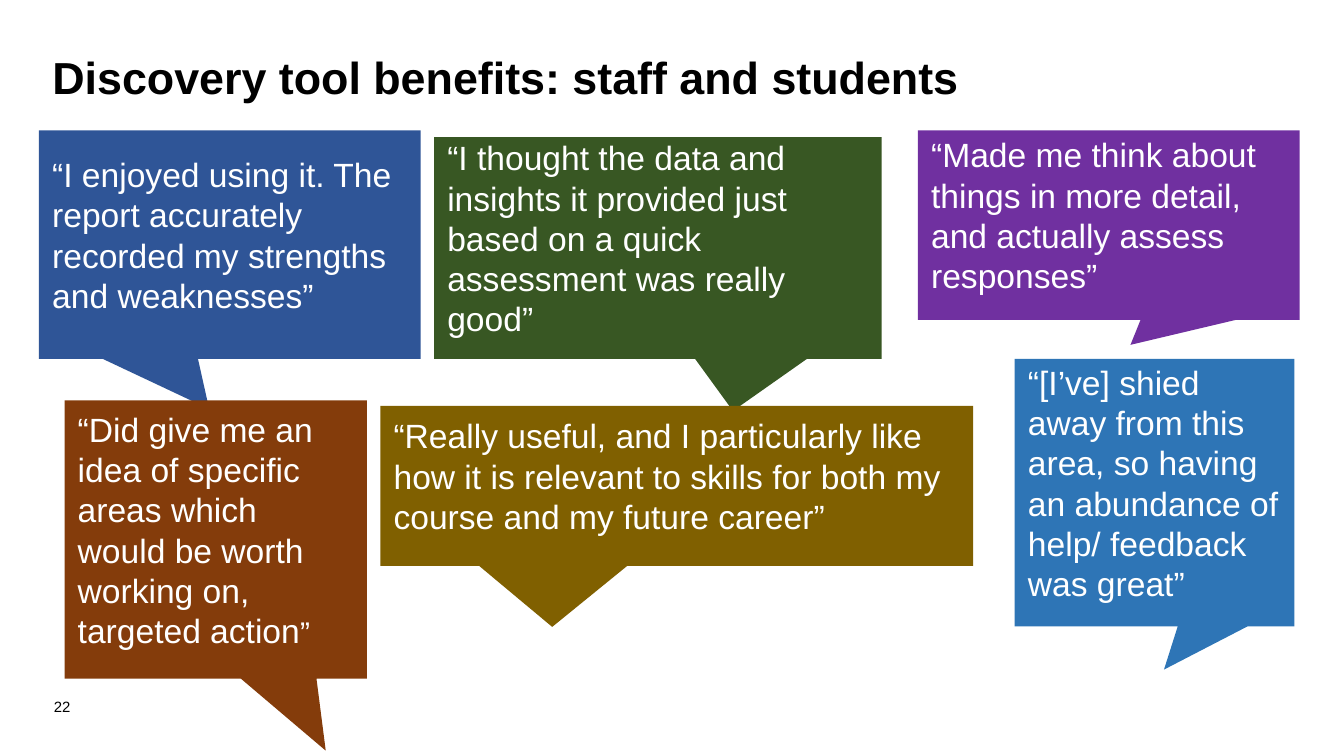
from pptx import Presentation
from pptx.dml.color import RGBColor
from pptx.enum.shapes import MSO_SHAPE
from pptx.enum.text import MSO_ANCHOR, PP_ALIGN
from pptx.util import Inches, Pt

CALLOUT = MSO_SHAPE.RECTANGULAR_CALLOUT
TOP, MIDDLE = MSO_ANCHOR.TOP, MSO_ANCHOR.MIDDLE
LEFT = PP_ALIGN.LEFT

FONT = "Arial"
BLACK, WHITE = "000000", "FFFFFF"
QUOTE_INSETS = (0.1, 0.12, 0.1, 0.27)
NO_INSETS = (0, 0, 0, 0)

TITLE = "Discovery tool benefits: staff and students"
PAGE_NUMBER = "22"

# box, pointer tip as shares of the box from its centre, fill, runs
QUOTES = [
    ((0.29, 0.97, 2.84, 1.7), (-0.054, 0.72), "2F5597",
     [("“I enjoyed using it. The report accurately recorded my strengths and weaknesses”", 18)]),
    ((0.48, 2.98, 2.25, 2.07), (0.364, 0.759), "843C0B",
     [("“Did give me an idea of specific areas which would be worth working on, targeted action", 18),
      ("”", 16)]),
    ((3.23, 1.02, 3.33, 1.65), (0.168, 0.735), "385723",
     [("“I thought the data and insights it provided just based on a quick assessment was really good”", 18)]),
    ((6.83, 0.97, 2.84, 1.41), (0.057, 0.632), "7030A0",
     [("“Made me think about things in more detail, and actually assess responses”", 18)]),
    ((2.83, 3.02, 4.41, 1.19), (-0.21, 0.882), "806000",
     [("“Really useful, and I particularly like how it is relevant to skills for both my course and my future career”", 18)]),
    ((7.55, 2.67, 2.08, 1.99), (0.034, 0.662), "2E75B6",
     [("“[I’ve] shied away from this area, so having an abundance of help/ feedback was great”", 18)]),
]


def color(value):
    return RGBColor.from_string(value)


def write(shape, runs, text_color, insets, anchor, bold=False):
    frame = shape.text_frame
    frame.word_wrap = True
    frame.vertical_anchor = anchor
    (frame.margin_left, frame.margin_top,
     frame.margin_right, frame.margin_bottom) = map(Inches, insets)
    paragraph = frame.paragraphs[0]
    paragraph.alignment = LEFT
    for text, size in runs:
        run = paragraph.add_run()
        run.text = text
        run.font.name = FONT
        run.font.size = Pt(size)
        run.font.bold = bold
        run.font.color.rgb = color(text_color)


def add_text(slide, box, text, size, anchor, bold=False):
    shape = slide.shapes.add_textbox(*map(Inches, box))
    write(shape, [(text, size)], BLACK, NO_INSETS, anchor, bold)


def add_quote(slide, box, tip, fill, runs):
    shape = slide.shapes.add_shape(CALLOUT, *map(Inches, box))
    shape.shadow.inherit = False
    shape.adjustments[0], shape.adjustments[1] = tip
    shape.fill.solid()
    shape.fill.fore_color.rgb = color(fill)
    shape.line.fill.background()
    write(shape, runs, WHITE, QUOTE_INSETS, MIDDLE)


def main():
    presentation = Presentation()
    presentation.slide_width = Inches(10)
    presentation.slide_height = presentation.slide_width * 9 // 16
    slide = presentation.slides.add_slide(presentation.slide_layouts[6])
    add_text(slide, (0.39, 0.37, 7.13, 0.37), TITLE, 24, TOP, bold=True)
    for quote in QUOTES:
        add_quote(slide, *quote)
    add_text(slide, (0.4, 5.06, 0.22, 0.39), PAGE_NUMBER, 8, MIDDLE)
    presentation.save("out.pptx")


if __name__ == "__main__":
    main()
